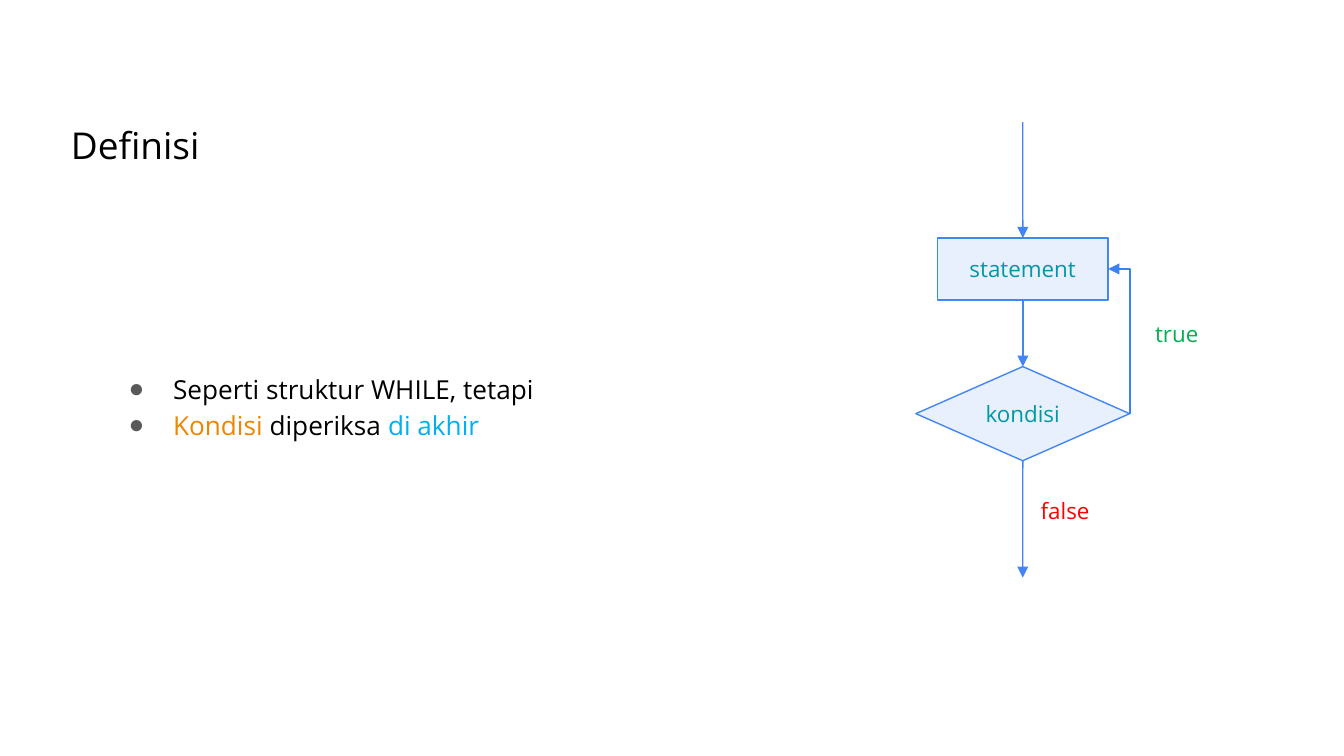
from lxml import etree
from pptx import Presentation
from pptx.dml.color import RGBColor
from pptx.enum.shapes import MSO_CONNECTOR as LINK, MSO_SHAPE as SHAPE
from pptx.enum.text import MSO_ANCHOR as ANCHOR, MSO_AUTO_SIZE as FIT, PP_ALIGN as ALIGN
from pptx.oxml.ns import qn
from pptx.util import Cm, Pt

BLACK = RGBColor(0x00, 0x00, 0x00)
ORANGE = RGBColor(0xEF, 0x86, 0x00)
SKY = RGBColor(0x00, 0xB0, 0xF0)
TEAL = RGBColor(0x00, 0x97, 0xA7)
GREEN = RGBColor(0x00, 0xB0, 0x50)
RED = RGBColor(0xFF, 0x00, 0x00)
PALE_BLUE = RGBColor(0x8E, 0xB6, 0xF8)
BLUE = RGBColor(0x42, 0x85, 0xF4)
LOOP_BLUE = RGBColor(0x3C, 0x81, 0xF3)


def write(paragraph, text, size=12, color=BLACK, align=ALIGN.LEFT):
    paragraph.alignment = align
    run = paragraph.add_run()
    run.text = text
    run.font.name = "Open Sans"
    run.font.size = Pt(size)
    run.font.color.rgb = color


def add_arrow(kind, x1, y1, x2, y2, color=BLUE):
    arrow = slide.shapes.add_connector(kind, Cm(x1), Cm(y1), Cm(x2), Cm(y2))
    arrow.line.color.rgb = color
    arrow.line.width = Pt(0.75)
    etree.SubElement(arrow.line._get_or_add_ln(), qn("a:tailEnd"), type="triangle")
    etree.SubElement(arrow._element.spPr, qn("a:effectLst"))
    return arrow


prs = Presentation()
prs.slide_width, prs.slide_height = Cm(25.4), Cm(14.29)
slide = prs.slides.add_slide(prs.slide_layouts[1])

# Title and list placeholders
title, points = slide.shapes.title, slide.placeholders[1]
for holder, box in ((title, (1.09, 2.06, 23.22, 1.09)), (points, (1.75, 6.71, 11.61, 3.45))):
    holder.left, holder.top, holder.width, holder.height = map(Cm, box)
    frame = holder.text_frame
    frame.margin_left = frame.margin_right = Cm(0.25)
    frame.margin_top = frame.margin_bottom = Cm(0.25)
    frame.vertical_anchor = ANCHOR.TOP
    frame.auto_size = FIT.NONE
    frame.word_wrap = True

write(title.text_frame.paragraphs[0], "Definisi", size=19.8)

# Bulleted list
lines = (
    (("Seperti struktur WHILE, tetapi", BLACK),),
    (("Kondisi ", ORANGE), ("diperiksa ", BLACK), ("di akhir", SKY)),
)
for number, line in enumerate(lines):
    frame = points.text_frame
    point = frame.add_paragraph() if number else frame.paragraphs[0]
    point.line_spacing = 1.15
    point.space_before = Pt(0)
    properties = point._p.get_or_add_pPr()
    properties.set("marL", str(Cm(1.27)))
    properties.set("indent", str(-Cm(0.84)))
    bullet_color = etree.SubElement(properties, qn("a:buClr"))
    etree.SubElement(bullet_color, qn("a:srgbClr"), val="595959")
    etree.SubElement(properties, qn("a:buChar"), char="●")
    for text, color in line:
        write(point, text, size=14, color=color)

# Flowchart steps and branch labels: text, shape, centre x, top, width, height
AXIS = 19.33
parts = (
    ("statement", SHAPE.FLOWCHART_PROCESS, AXIS, 4.5, 3.22, 1.17, TEAL),
    ("kondisi", SHAPE.FLOWCHART_DECISION, AXIS, 6.93, 4.04, 1.78, TEAL),
    ("true", SHAPE.FLOWCHART_PROCESS, 22.24, 5.92, 3.38, 0.79, GREEN),
    ("false", SHAPE.FLOWCHART_PROCESS, 20.13, 9.25, 3.38, 0.79, RED),
)
steps = {}
for text, kind, center, top, width, height, color in parts:
    step = slide.shapes.add_shape(kind, Cm(center - width / 2), Cm(top), Cm(width), Cm(height))
    step.shadow.inherit = False
    if color == TEAL:
        step.fill.solid()
        step.fill.fore_color.rgb = PALE_BLUE
        tint = step._element.spPr.find(qn("a:solidFill"))[0]
        etree.SubElement(tint, qn("a:alpha"), val="20000")
        step.line.color.rgb = BLUE
        step.line.width = Pt(0.75)
    else:
        step.fill.background()
        step.line.fill.background()
    step.text_frame.word_wrap = True
    step.text_frame.vertical_anchor = ANCHOR.MIDDLE
    write(step.text_frame.paragraphs[0], text, color=color, align=ALIGN.CENTER)
    steps[text] = step

# Straight flow from entry to exit
entry = add_arrow(LINK.STRAIGHT, AXIS, 2.31, AXIS, 4.5)
entry.end_connect(steps["statement"], 0)
check = add_arrow(LINK.STRAIGHT, AXIS, 5.67, AXIS, 6.93)
check.begin_connect(steps["statement"], 2)
check.end_connect(steps["kondisi"], 0)
leave = add_arrow(LINK.STRAIGHT, AXIS, 8.71, AXIS, 10.92)
leave.begin_connect(steps["kondisi"], 2)

# Loop back: a one-bend connector turned to run up, then left
repeat = add_arrow(LINK.ELBOW, 19.78, 6.66, 22.52, 6.25, color=LOOP_BLUE)
repeat._element.spPr.find(qn("a:xfrm")).set("rot", "16200000")
repeat._element.spPr.find(qn("a:prstGeom")).set("prst", "bentConnector2")

prs.save("out.pptx")
